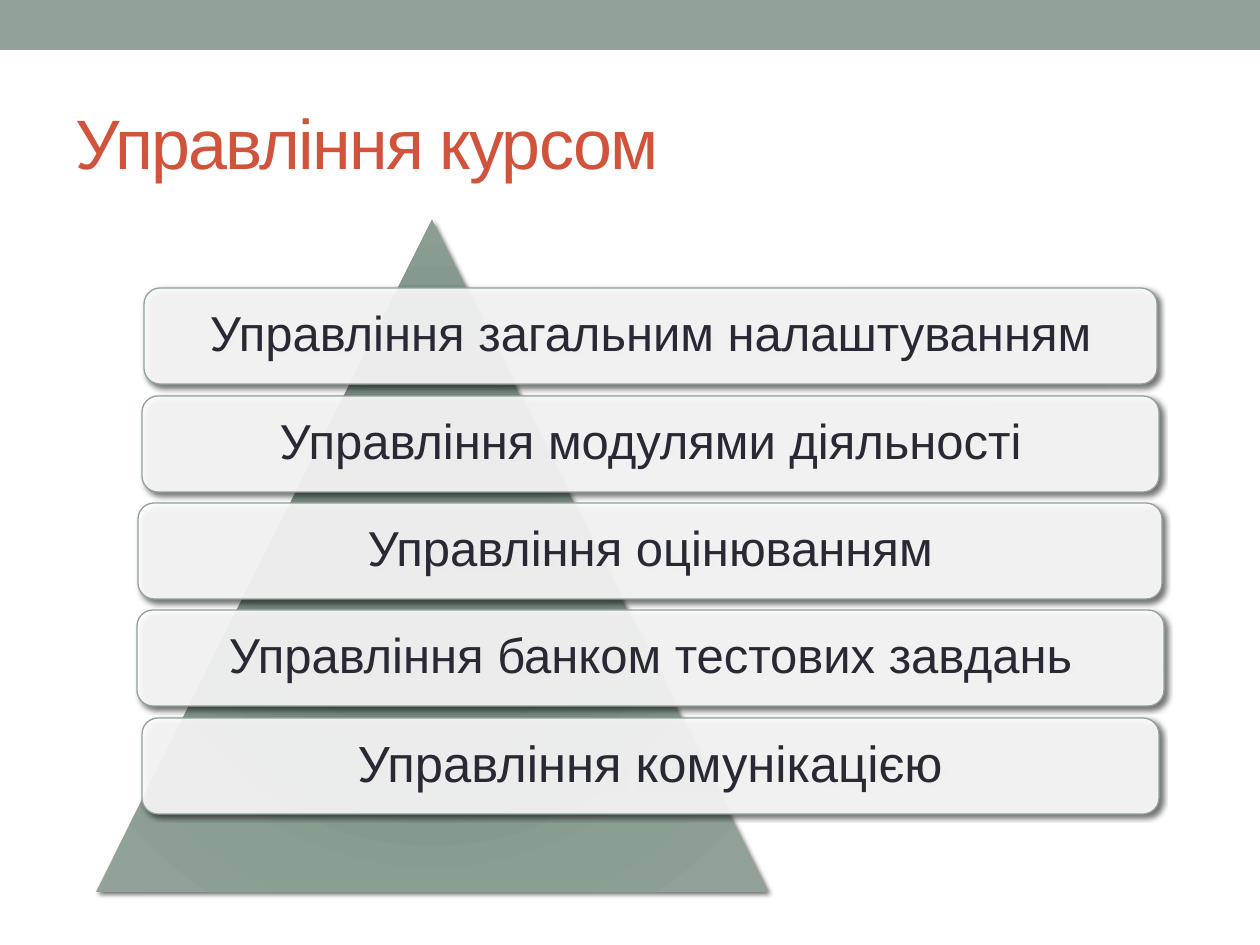
from lxml.etree import SubElement
from pptx import Presentation
from pptx.dml.color import RGBColor
from pptx.enum.shapes import MSO_SHAPE
from pptx.enum.text import MSO_ANCHOR, MSO_AUTO_SIZE, PP_ALIGN
from pptx.oxml.ns import qn
from pptx.util import Emu, Pt

SAGE = RGBColor(0x93, 0xA2, 0x99)
WHITE = RGBColor(0xFF, 0xFF, 0xFF)
BLACK = RGBColor(0x00, 0x00, 0x00)
RUST = RGBColor(0xD2, 0x53, 0x3C)
INK = RGBColor(0x29, 0x29, 0x34)
PYRAMID_STOPS = [
    (0, RGBColor(0x7B, 0x8E, 0x82)),
    (34, RGBColor(0x7B, 0x8D, 0x83)),
    (70, RGBColor(0x8A, 0x9E, 0x92)),
    (100, SAGE),
]
CARDS = [
    ("Управління загальним налаштуванням", 1013, 28),
    ("Управління модулями діяльності", 1017, 28),
    ("Управління оцінюванням", 1024, 28),
    ("Управління банком тестових завдань", 1027, 28),
    ("Управління комунікацією", 1017, 29),
]
CARD_CENTER = 650
CARD_TOP = 288
CARD_HEIGHT = 96
CARD_GAP = 23 / 2


def px(length):
    return Emu(round(length * 914400 / 126))


class SlideBuilder:
    font_name = "Arial"

    def __init__(self, presentation):
        self.slide = presentation.slides.add_slide(presentation.slide_layouts[5])

    def add_run(self, paragraph, text, size, color):
        run = paragraph.add_run()
        run.text = text
        run.font.name = self.font_name
        run.font.size = Pt(size)
        run.font.color.rgb = color
        return run

    def add_shape(self, kind, left, top, width, height):
        shape = self.slide.shapes.add_shape(
            kind, px(left), px(top), px(width), px(height)
        )
        shape.shadow.inherit = False
        shape.line.fill.background()
        return shape

    def add_color(self, parent, color, alpha=100):
        element = SubElement(parent, qn("a:srgbClr"), val=str(color))
        if alpha < 100:
            SubElement(element, qn("a:alpha"), val=str(alpha * 1000))

    def add_shadow(self, shape):
        effects = shape.element.spPr.find(qn("a:effectLst"))
        shadow = SubElement(
            effects, qn("a:outerShdw"), blurRad=str(Pt(3)), dist=str(Pt(2)),
            dir=str(45 * 60000), algn="br", rotWithShape="0",
        )
        self.add_color(shadow, BLACK, 60)

    def add_title(self, text, left, top, width, height):
        title = self.slide.shapes.title
        title.left, title.top = px(left), px(top)
        title.width, title.height = px(width), px(height)
        frame = title.text_frame
        frame.auto_size = MSO_AUTO_SIZE.NONE
        frame.vertical_anchor = MSO_ANCHOR.MIDDLE
        paragraph = frame.paragraphs[0]
        paragraph.alignment = PP_ALIGN.LEFT
        run = self.add_run(paragraph, text, 40, RUST)
        run.font._element.set("spc", "-100")

    def add_bar(self, left, top, width, height):
        bar = self.add_shape(MSO_SHAPE.RECTANGLE, left, top, width, height)
        bar.fill.solid()
        bar.fill.fore_color.rgb = SAGE

    def add_pyramid(self, left, top, width, height):
        pyramid = self.add_shape(
            MSO_SHAPE.ISOSCELES_TRIANGLE, left, top, width, height
        )
        pyramid.fill.gradient()
        gradient = pyramid.element.spPr.find(qn("a:gradFill"))
        for child in list(gradient):
            gradient.remove(child)
        stops = SubElement(gradient, qn("a:gsLst"))
        for position, color in PYRAMID_STOPS:
            stop = SubElement(stops, qn("a:gs"), pos=str(position * 1000))
            self.add_color(stop, color)
        circle = SubElement(gradient, qn("a:path"), {"path": "circle"})
        SubElement(
            circle, qn("a:fillToRect"), dict.fromkeys("ltrb", "100000")
        )
        self.add_shadow(pyramid)

    def add_card(self, text, size, left, top, width, height):
        card = self.add_shape(MSO_SHAPE.ROUNDED_RECTANGLE, left, top, width, height)
        card.fill.solid()
        card.fill.fore_color.rgb = WHITE
        color = card.element.spPr.find(qn("a:solidFill"))[0]
        SubElement(color, qn("a:alpha"), val="90000")
        card.line.color.rgb = SAGE
        card.line.width = Pt(0.75)
        self.add_shadow(card)
        frame = card.text_frame
        frame.word_wrap = True
        frame.vertical_anchor = MSO_ANCHOR.MIDDLE
        frame.margin_left = frame.margin_right = px(15)
        frame.margin_top = frame.margin_bottom = px(15)
        paragraph = frame.paragraphs[0]
        paragraph.alignment = PP_ALIGN.CENTER
        paragraph.line_spacing = 0.9
        self.add_run(paragraph, text, size, INK)


def main():
    presentation = Presentation()
    presentation.slide_width = px(1260)
    presentation.slide_height = px(945)
    builder = SlideBuilder(presentation)
    builder.add_bar(0, 0, 1260, 50)
    builder.add_title("Управління курсом", 63, 73, 1134, 136)
    builder.add_pyramid(96, 220, 672, 672)
    for index, (text, width, size) in enumerate(CARDS):
        left = CARD_CENTER - width // 2
        top = round(CARD_TOP + index * (CARD_HEIGHT + CARD_GAP))
        builder.add_card(text, size, left, top, width, CARD_HEIGHT)
    presentation.save("out.pptx")


if __name__ == "__main__":
    main()
